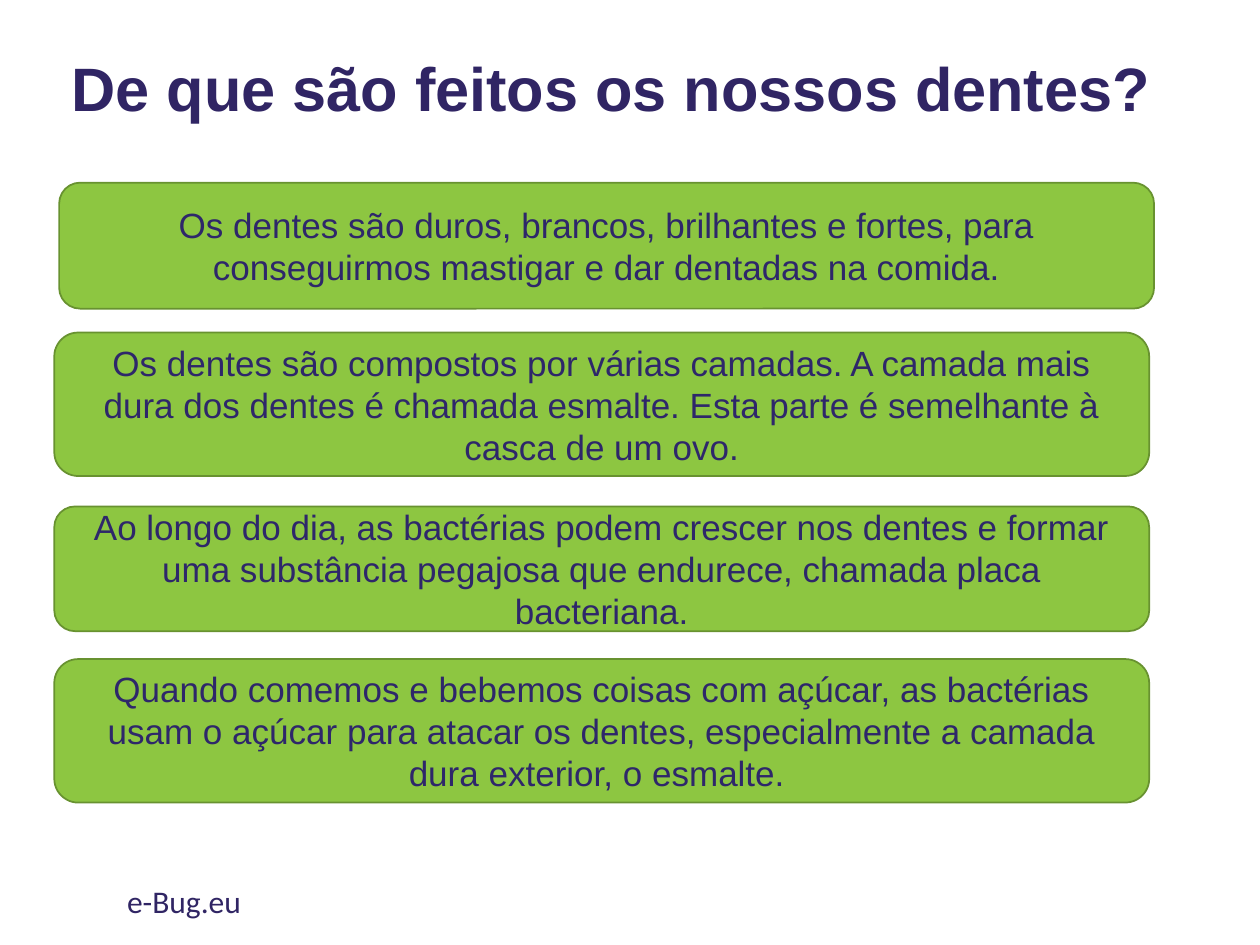
"""Build a slide explaining what teeth are made of."""
from dataclasses import dataclass

from pptx import Presentation
from pptx.dml.color import RGBColor
from pptx.enum.shapes import MSO_SHAPE
from pptx.enum.text import MSO_ANCHOR, PP_ALIGN
from pptx.slide import Slide
from pptx.text.text import TextFrame
from pptx.util import Pt


@dataclass(frozen=True)
class Theme:
    ink: RGBColor = RGBColor.from_string("302564")
    card_ink: RGBColor = RGBColor.from_string("2E276A")
    card_fill: RGBColor = RGBColor.from_string("8DC641")
    card_line: RGBColor = RGBColor.from_string("689230")
    heading_font: str = "Arial"
    footer_font: str = "Calibri"
    title_size: float = 35
    card_size: float = 20
    footer_size: float = 18


@dataclass(frozen=True)
class Box:
    left: float
    top: float
    width: float
    height: float

    def place(self) -> tuple[Pt, Pt, Pt, Pt]:
        return Pt(self.left), Pt(self.top), Pt(self.width), Pt(self.height)


@dataclass(frozen=True)
class Card:
    top: float
    height: float
    text: str
    left: float = 31
    width: float = 625.7


THEME = Theme()
TITLE_BOX = Box(30.24, 0, 638.6, 104.4)
FOOTER_BOX = Box(65.5, 500.4, 243.4, 28.8)
CARDS = [
    Card(104.4, 72, "Os dentes são duros, brancos, brilhantes e fortes, para "
         "conseguirmos mastigar e dar dentadas na comida.", left=33.8),
    Card(190, 82, "Os dentes são compostos por várias camadas. A camada mais "
         "dura dos dentes é chamada esmalte. Esta parte é semelhante à casca "
         "de um ovo."),
    Card(289.4, 71.3, "Ao longo do dia, as bactérias podem crescer nos dentes "
         "e formar uma substância pegajosa que endurece, chamada placa "
         "bacteriana."),
    Card(376.6, 82, "Quando comemos e bebemos coisas com açúcar, as bactérias "
         "usam o açúcar para atacar os dentes, especialmente a camada dura "
         "exterior, o esmalte. "),
]


def write(tf: TextFrame, text: str, font: str, size: float, color: RGBColor,
          align: PP_ALIGN = PP_ALIGN.LEFT, anchor: MSO_ANCHOR = MSO_ANCHOR.TOP,
          bold: bool = False, spacing: float = 1.0) -> None:
    tf.text = text
    tf.word_wrap = True
    tf.vertical_anchor = anchor
    p = tf.paragraphs[0]
    p.alignment = align
    p.line_spacing = spacing
    r = p.runs[0]
    r.font.name = font
    r.font.size = Pt(size)
    r.font.bold = bold
    r.font.color.rgb = color


def add_card(s: Slide, card: Card) -> None:
    box = Box(card.left, card.top, card.width, card.height)
    sp = s.shapes.add_shape(MSO_SHAPE.ROUNDED_RECTANGLE, *box.place())
    sp.shadow.inherit = False
    sp.fill.solid()
    sp.fill.fore_color.rgb = THEME.card_fill
    sp.line.color.rgb = THEME.card_line
    sp.line.width = Pt(1)
    write(sp.text_frame, card.text, THEME.heading_font, THEME.card_size,
          THEME.card_ink, PP_ALIGN.CENTER, MSO_ANCHOR.MIDDLE)


def main() -> None:
    prs = Presentation()
    prs.slide_width, prs.slide_height = Pt(720), Pt(540)
    s = prs.slides.add_slide(prs.slide_layouts[6])
    title = s.shapes.add_textbox(*TITLE_BOX.place())
    write(title.text_frame, "De que são feitos os nossos dentes?",
          THEME.heading_font, THEME.title_size, THEME.ink, PP_ALIGN.CENTER,
          MSO_ANCHOR.MIDDLE, bold=True, spacing=0.9)
    footer = s.shapes.add_textbox(*FOOTER_BOX.place())
    write(footer.text_frame, "e-Bug.eu", THEME.footer_font,
          THEME.footer_size, THEME.ink)
    for card in CARDS:
        add_card(s, card)
    prs.save("out.pptx")


if __name__ == "__main__":
    main()
